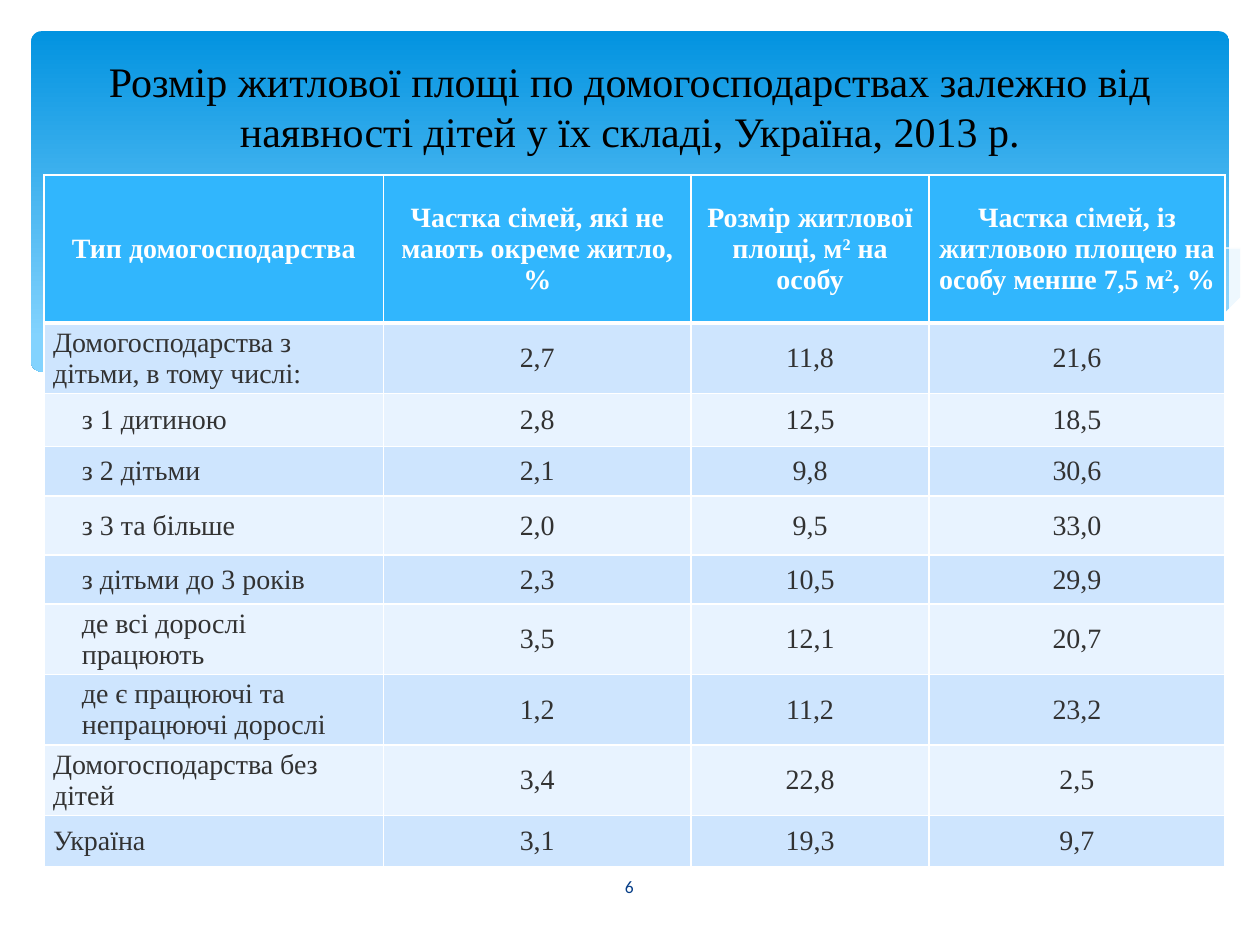
import dataclasses
import pptx
import pptx.dml.color
import pptx.enum.shapes
import pptx.enum.text
import pptx.oxml
import pptx.oxml.ns
import pptx.util

Cm = pptx.util.Cm
Pt = pptx.util.Pt
RGB = pptx.dml.color.RGBColor.from_string
ALIGN = pptx.enum.text.PP_ALIGN
MID = pptx.enum.text.MSO_ANCHOR.MIDDLE
qn = pptx.oxml.ns.qn


@dataclasses.dataclass(frozen=True)
class Theme:
    serif: str = "Times New Roman"
    sans: str = "Calibri"
    black: str = "000000"
    ink: str = "323232"
    white: str = "FFFFFF"
    navy: str = "073E87"
    head: str = "31B6FD"
    bands: tuple = ("CEE5FE", "E8F3FF")
    sky: tuple = ("0293E0", "83D3FE")
    wave: str = "C6E7FC"
    title: int = 24
    cell: int = 16
    page: int = 10


THEME = Theme()

RIGHT = [(24.79, 5.05), (23.75, 5.26), (22.63, 5.49), (21.13, 5.84), (19.13, 6.3),
         (17.93, 6.53), (16.79, 6.73), (17.91, 6.88), (19.23, 7.01), (20.68, 7.06),
         (21.92, 6.99), (22.99, 6.83), (23.93, 6.58), (24.79, 6.27)]
MIDDLE = [(22.68, 6.93), (21.26, 6.73), (19.69, 6.45), (17.93, 6.1), (15.98, 5.64),
          (14.45, 5.28), (13.06, 5.03), (11.81, 4.85), (10.67, 4.75), (9.17, 4.72),
          (7.95, 4.78), (7.26, 4.85), (8.69, 5.05), (10.26, 5.36), (11.4, 5.64),
          (13.46, 6.1), (15.27, 6.48), (16.89, 6.76), (18.34, 6.96), (19.63, 7.04),
          (20.78, 7.06), (21.77, 7.04)]
FALL = [(7.85, 4.95), (8.74, 4.83), (9.83, 4.75), (11, 4.75), (12.42, 4.83),
        (14.12, 5), (16.15, 5.28), (18.47, 5.74), (21.11, 6.38), (23.04, 6.91)]
RISE = [(15.57, 6.53), (17.65, 5.97), (19.71, 5.49), (22, 5.05), (23.47, 4.83),
        (24.77, 4.7)]
FRONT = [(24.82, 6.25), (23.88, 6.58), (22.83, 6.83), (21.59, 6.99), (20.55, 7.04),
         (18.9, 6.96), (16.97, 6.73), (14.71, 6.35), (12.78, 5.92), (10.62, 5.41),
         (8.61, 5), (6.88, 4.78), (5.36, 4.67), (4.09, 4.67), (2.69, 4.8), (1.7, 5),
         (1.02, 5.21), (0.58, 5.41), (0.58, 8.36), (24.82, 8.36)]

TITLE = ("Розмір житлової площі по домогосподарствах залежно від "
         "наявності дітей у їх складі, Україна, 2013 р.")
HEADS = ["Тип домогосподарства",
         "Частка сімей, які не мають окреме житло, %",
         "Розмір житлової площі, м^2^ на особу",
         "Частка сімей, із житловою площею на особу менше 7,5 м^2^, %"]
ROWS = [(0, "Домогосподарства з дітьми, в тому числі:", "2,7", "11,8", "21,6"),
        (1, "з 1 дитиною", "2,8", "12,5", "18,5"),
        (1, "з 2 дітьми", "2,1", "9,8", "30,6"),
        (1, "з 3 та більше", "2,0", "9,5", "33,0"),
        (1, "з дітьми до 3 років", "2,3", "10,5", "29,9"),
        (1, "де всі дорослі працюють", "3,5", "12,1", "20,7"),
        (1, "де є працюючі та непрацюючі дорослі", "1,2", "11,2", "23,2"),
        (0, "Домогосподарства без дітей", "3,4", "22,8", "2,5"),
        (0, "Україна", "3,1", "19,3", "9,7")]
WIDTHS = [6.84, 6.2, 4.8, 5.96]
HEIGHTS = [2.98, 1.42, 1.07, 1, 1.19, 0.99, 1.42, 1.42, 1.42, 1.03]


def write(frame, text, size, tint, font=THEME.serif, bold=False, align=ALIGN.CENTER):
    para = frame.paragraphs[0]
    para.alignment = align
    for spot, part in enumerate(text.split("^")):
        run = para.add_run()
        run.text = part
        run.font.name = font
        run.font.size = Pt(size)
        run.font.bold = bold
        run.font.color.rgb = RGB(tint)
        if spot % 2:
            run._r.get_or_add_rPr().set("baseline", "30000")
    return para


def panel(slide):
    shape = slide.shapes.add_shape(pptx.enum.shapes.MSO_SHAPE.ROUNDED_RECTANGLE,
                                   Cm(0.63), Cm(0.63), Cm(24.15), Cm(6.86))
    shape.adjustments[0] = 0.03
    shape.shadow.inherit = False
    shape.line.fill.background()
    shape.fill.gradient()
    shape.fill.gradient_angle = 270
    for stop, place, tint in zip(shape.fill.gradient_stops, (0, 0.9), THEME.sky):
        stop.position = place
        stop.color.rgb = RGB(tint)


def curve(slide, points, fill=None, alpha=100):
    pen = slide.shapes.build_freeform(*points[0], scale=Cm(1))
    pen.add_line_segments(points[1:], close=fill is not None)
    shape = pen.convert_to_shape()
    shape.shadow.inherit = False
    if fill is None:
        shape.fill.background()
        shape.line.color.rgb = RGB(THEME.white)
        shape.line.width = Pt(0)
        return
    shape.line.fill.background()
    shape.fill.solid()
    shape.fill.fore_color.rgb = RGB(fill)
    if alpha < 100:
        tint = shape.element.spPr.find(qn("a:solidFill"))[0]
        pptx.oxml.ns.qn("a:alpha")
        tint.append(pptx.oxml.parse_xml(
            f'<a:alpha {pptx.oxml.ns.nsdecls("a")} val="{alpha * 1000}"/>'))


def border(cell, **sides):
    props = cell._tc.get_or_add_tcPr()
    for side in "LRTB":
        width = int(Pt(sides.get(side, 1)))
        props.append(pptx.oxml.parse_xml(
            f'<a:ln{side} {pptx.oxml.ns.nsdecls("a")} w="{width}"><a:solidFill>'
            f'<a:srgbClr val="{THEME.white}"/></a:solidFill></a:ln{side}>'))


def style(cell, fill, **sides):
    border(cell, **sides)
    cell.fill.solid()
    cell.fill.fore_color.rgb = RGB(fill)
    cell.vertical_anchor = MID
    cell.margin_left = cell.margin_right = Cm(0.18)
    cell.margin_top = cell.margin_bottom = 0


def table(slide):
    grid = slide.shapes.add_table(len(HEIGHTS), len(WIDTHS), Cm(0.89), Cm(3.53),
                                  Cm(sum(WIDTHS)), Cm(sum(HEIGHTS))).table
    for col, width in zip(grid.columns, WIDTHS):
        col.width = Cm(width)
    for row, height in zip(grid.rows, HEIGHTS):
        row.height = Cm(height)
    for x, text in enumerate(HEADS):
        cell = grid.cell(0, x)
        style(cell, THEME.head, B=3)
        write(cell.text_frame, text, THEME.cell, THEME.white, bold=True)
    for y, (level, *texts) in enumerate(ROWS, 1):
        for x, text in enumerate(texts):
            cell = grid.cell(y, x)
            style(cell, THEME.bands[(y - 1) % 2], T=3 if y == 1 else 1)
            para = write(cell.text_frame, text, THEME.cell, THEME.ink,
                         align=ALIGN.CENTER if x else ALIGN.LEFT)
            if level and x == 0:
                para._p.get_or_add_pPr().set("marL", str(Cm(0.58)))


def title(slide):
    shape = slide.shapes.title
    shape.element.getparent().append(shape.element)
    shape.left, shape.top, shape.width, shape.height = Cm(1.27), Cm(0.94), Cm(22.86), Cm(2.39)
    frame = shape.text_frame
    frame.auto_size = pptx.enum.text.MSO_AUTO_SIZE.NONE
    frame.vertical_anchor = MID
    write(frame, TITLE, THEME.title, THEME.black)


def page(slide):
    frame = slide.shapes.add_textbox(Cm(11.07), Cm(17.37), Cm(3.23), Cm(1.02)).text_frame
    frame.word_wrap = True
    frame.vertical_anchor = MID
    write(frame, "6", THEME.page, THEME.navy, THEME.sans)


def main():
    deck = pptx.Presentation()
    deck.slide_width, deck.slide_height = Cm(25.4), Cm(19.05)
    slide = deck.slides.add_slide(deck.slide_layouts[5])
    panel(slide)
    curve(slide, RIGHT, THEME.wave, 29)
    curve(slide, MIDDLE, THEME.wave, 40)
    curve(slide, FALL)
    curve(slide, RISE)
    curve(slide, FRONT, THEME.white)
    page(slide)
    title(slide)
    table(slide)
    deck.save("out.pptx")


if __name__ == "__main__":
    main()
